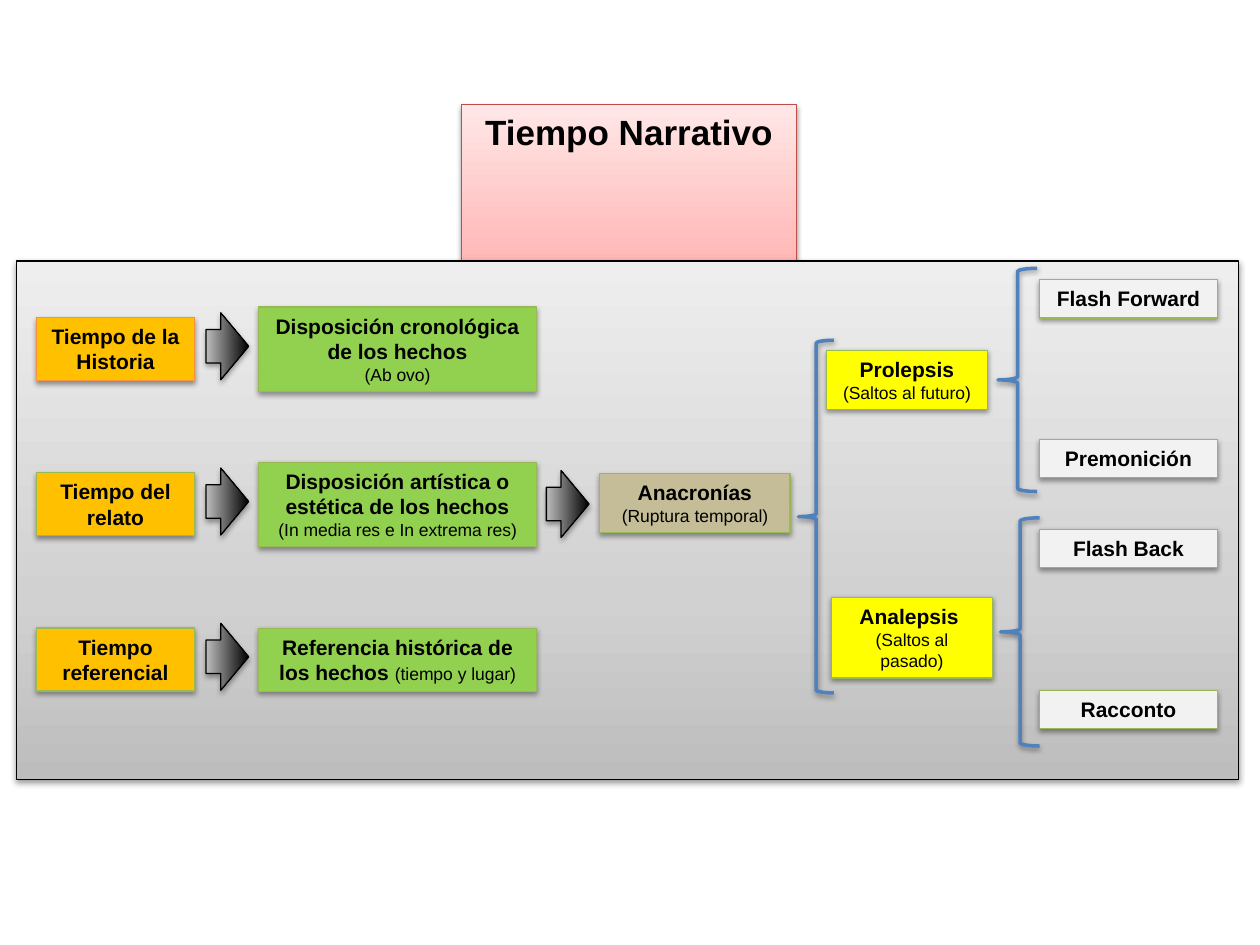
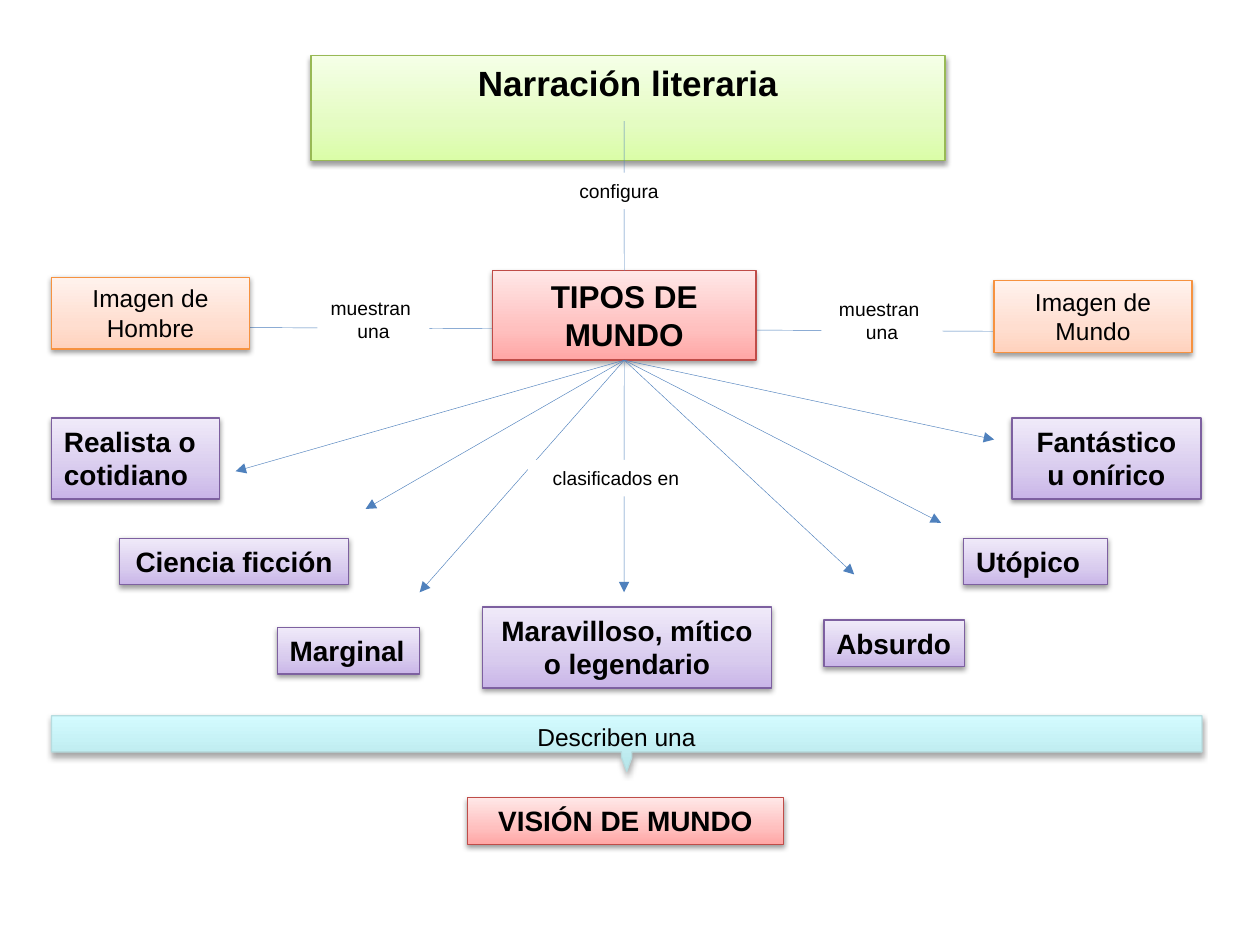
from lxml import etree
from pptx import Presentation, util as u
from pptx.dml import color
from pptx.enum import shapes, text
from pptx.oxml import ns

FONT = "Arial"
BLACK, WHITE, BLUE, GREEN = "000000", "FFFFFF", "4F81BD", "98B955"
KIND = shapes.MSO_SHAPE
MID, LEFT = text.PP_ALIGN.CENTER, text.PP_ALIGN.LEFT

GRAY = [(0, "BDBDBD"), (35, "D1D1D1"), (100, "EEEEEE")]
STEEL = [(0, BLACK), (100, "BDBDBD")]
AQUA = [(0, "B5E5E9"), (100, "D3FBFF")]
RED = [(0, "FFA6A5"), (35, "FFC0BF"), (100, "FFE7E7")]
LIME = [(0, "DAFDA7"), (35, "E4FCC2"), (100, "F5FFE7")]
PEACH = [(0, "FFD2BD"), (35, "FFDED0"), (100, "FFF2ED")]
VIOLET = [(0, "C9B5E8"), (35, "D8CBEE"), (100, "F0EAF9")]
ROSE, ORANGE, PLUM = "BF4C48", "F69240", "7D60A0"

FRAME = {
    "word_wrap": True,
    "auto_size": text.MSO_AUTO_SIZE.SHAPE_TO_FIT_TEXT,
    "vertical_anchor": text.MSO_ANCHOR.TOP,
}


def hue(code):
    return color.RGBColor.from_string(code)


def put(item, values):
    for name, value in values.items():
        setattr(item, name, value)


def cm(values):
    return [u.Cm(value) for value in values]


def node(parent, tag, **attrs):
    return etree.SubElement(parent, ns.qn("a:" + tag), attrs)


def paint(shape, fill):
    if fill is None:
        shape.fill.background()
    elif isinstance(fill, str):
        shape.fill.solid()
        shape.fill.fore_color.rgb = hue(fill)
    else:
        shape.fill.gradient()
        shape.fill.gradient_angle = 90
        stops = shape._element.spPr.find(".//" + ns.qn("a:gsLst"))
        for stop in list(stops):
            stops.remove(stop)
        for place, code in fill:
            stop = node(stops, "gs", pos=str(place * 1000))
            node(stop, "srgbClr", val=code)


def shade(shape, alpha, dist):
    shape.shadow.inherit = False
    effects = shape._element.spPr.find(ns.qn("a:effectLst"))
    cast = node(effects, "outerShdw", blurRad=str(u.Pt(3.1)),
                dist=str(u.Pt(dist)), dir="5400000", rotWithShape="0")
    tint = node(cast, "srgbClr", val=BLACK)
    node(tint, "alpha", val=str(alpha * 1000))


def dress(shape, fill, edge, width=0.75, alpha=38, dist=1.6):
    paint(shape, fill)
    if edge:
        put(shape.line, {"width": u.Pt(width)})
        shape.line.color.rgb = hue(edge)
        shade(shape, alpha, dist)
    else:
        shape.line.fill.background()
        shape.shadow.inherit = False
    return shape


def write(shape, words, size, bold, align=MID):
    frame = shape.text_frame
    put(frame, FRAME)
    for index, line in enumerate(words.split("\n")):
        para = frame.add_paragraph() if index else frame.paragraphs[0]
        para.alignment = align
        head, mark, tail = line.partition("(")
        for part, points, heavy in ((head, size, bold), (mark + tail, 10, False)):
            if part:
                run = para.add_run()
                run.text = part
                put(run.font, {"name": FONT, "size": u.Pt(points), "bold": heavy})
                run.font.color.rgb = hue(BLACK)


def form(slide, kind, at, fill, edge, **look):
    return dress(slide.shapes.add_shape(kind, *cm(at)), fill, edge, **look)


def box(slide, words, at, fill, edge, size=12, bold=True, align=MID):
    shape = form(slide, KIND.RECTANGLE, at, fill, edge)
    write(shape, words, size, bold, align)
    return shape


def label(slide, words, at, align=MID):
    box(slide, words, at, WHITE, None, 11, False, align)


def title(slide, words, at, fill, edge):
    shape = slide.shapes.title
    put(shape, dict(zip(("left", "top", "width", "height"), cm(at))))
    dress(shape, fill, edge)
    write(shape, words, 20, True)


def arrow(slide, left, mid):
    shape = form(slide, KIND.DOWN_ARROW, (left, mid - 0.43, 1.35, 0.86),
                 STEEL, BLACK, alpha=35, dist=1.8)
    shape.rotation = 270
    shape.adjustments[1] = 0.655


def brace(slide, at):
    form(slide, KIND.LEFT_BRACE, at, None, BLUE, width=2)


def line(slide, start, end, tip=False):
    link = slide.shapes.add_connector(
        shapes.MSO_CONNECTOR.STRAIGHT, *cm(start + end))
    put(link.line, {"width": u.Pt(0.25)})
    link.line.color.rgb = hue(BLUE)
    if tip:
        node(link.get_or_add_ln(), "tailEnd", type="triangle")
    node(link._element.spPr, "effectLst")
    return link


def times(slide):
    form(slide, KIND.RECTANGLE, (0.33, 5.26, 24.64, 10.46), GRAY, BLACK)
    title(slide, "Tiempo Narrativo", (9.3, 2.11, 6.76, 1.12), RED, ROSE)
    rows = [
        ("Tiempo de la Historia", ORANGE, 1.7,
         "Disposición cronológica de los hechos\n(Ab ovo)"),
        ("Tiempo del relato", GREEN, 1.7,
         "Disposición artística o estética de los hechos\n"
         "(In media res e In extrema res)"),
        ("Tiempo referencial", GREEN, 1.27,
         "Referencia histórica de los hechos (tiempo y lugar)"),
    ]
    for index, (name, edge, high, note) in enumerate(rows):
        mid = 7.04 + 3.13 * index
        box(slide, name, (0.74, mid - 0.64, 3.18, 1.27), "FFC000", edge)
        box(slide, note, (5.21, mid - high / 2, 5.61, high), "92D050", GREEN)
        arrow(slide, 3.91, mid - 0.06)
    arrow(slide, 10.77, 10.16)
    box(slide, "Anacronías\n(Ruptura temporal)", (12.09, 9.55, 3.84, 1.19),
        "C4BD97", GREEN)
    box(slide, "Prolepsis\n(Saltos al futuro)", (16.66, 7.06, 3.25, 1.19),
        "FFFF00", GREEN)
    box(slide, "Analepsis \n(Saltos al pasado)", (16.76, 12.04, 3.25, 1.63),
        "FFFF00", GREEN)
    for name, top in (("Flash Forward", 5.64), ("Premonición", 8.86),
                      ("Flash Back", 10.67), ("Racconto", 13.92)):
        box(slide, name, (20.96, top, 3.58, 0.77), "F2F2F2", GREEN)
    for at in ((16.1, 6.86, 0.71, 7.11), (20.12, 5.41, 0.79, 4.5),
               (20.17, 10.44, 0.79, 4.6)):
        brace(slide, at)


def worlds(slide):
    title(slide, "Narración literaria", (6.27, 1.12, 12.78, 1.12), LIME, GREEN)
    line(slide, (4.39, 6.6), (20.4, 6.68))
    hub = box(slide, "TIPOS DE MUNDO", (9.93, 5.46, 5.31, 1.8), RED, ROSE, 18)
    line(slide, (12.58, 2.44), (12.58, 5.46)).end_connect(hub, 0)
    for end in ((4.75, 9.5), (7.37, 10.26), (8.46, 11.94), (12.58, 11.94),
                (17.22, 11.58), (18.97, 10.54), (20.04, 8.86)):
        line(slide, (12.58, 7.26), end, True).begin_connect(hub, 2)

    label(slide, "configura", (11.43, 3.48, 4.9, 0.74), LEFT)
    label(slide, "clasificados en", (10.64, 9.27, 3.56, 0.74))
    label(slide, "muestran \nuna", (6.4, 5.84, 2.26, 1.19))
    label(slide, "muestran \nuna", (16.56, 5.87, 2.44, 1.19))
    for name, left, top in (("Imagen de Hombre", 1.04, 5.59),
                            ("Imagen de Mundo", 20.04, 5.66)):
        box(slide, name, (left, top, 3.99, 1.45), PEACH, ORANGE, 14, False)

    kinds = [
        ("Realista o\ncotidiano", (1.04, 8.43, 3.38, 1.63), LEFT),
        ("Ciencia ficción", (2.41, 10.85, 4.62, 0.94), MID),
        ("Marginal", (5.59, 12.65, 2.87, 0.94), LEFT),
        ("Maravilloso, mítico o legendario", (9.73, 12.24, 5.82, 1.63), MID),
        ("Absurdo", (16.61, 12.5, 2.84, 0.94), LEFT),
        ("Utópico", (19.43, 10.85, 2.9, 0.94), LEFT),
        ("Fantástico u onírico", (20.4, 8.43, 3.81, 1.63), MID),
    ]
    for name, at, align in kinds:
        box(slide, name, at, VIOLET, PLUM, 16, True, align)

    band = form(slide, KIND.DOWN_ARROW_CALLOUT, (1.04, 14.43, 23.19, 1.12),
                AQUA, "B6DCDF", alpha=35, dist=1.8)
    for index, value in enumerate((0.25, 0.092, 0.25, 0.65)):
        band.adjustments[index] = value
    note = slide.shapes.add_textbox(*cm((8.99, 14.43, 6.88, 0.84)))
    write(note, "Describen una", 14, False)
    box(slide, "VISIÓN DE MUNDO", (9.42, 16.08, 6.38, 0.94), RED, ROSE, 16)


def main():
    deck = Presentation()
    put(deck, {"slide_width": u.Cm(25.4), "slide_height": u.Cm(19.05)})
    for draw in (times, worlds):
        draw(deck.slides.add_slide(deck.slide_layouts[5]))
    deck.save("out.pptx")


if __name__ == "__main__":
    main()
